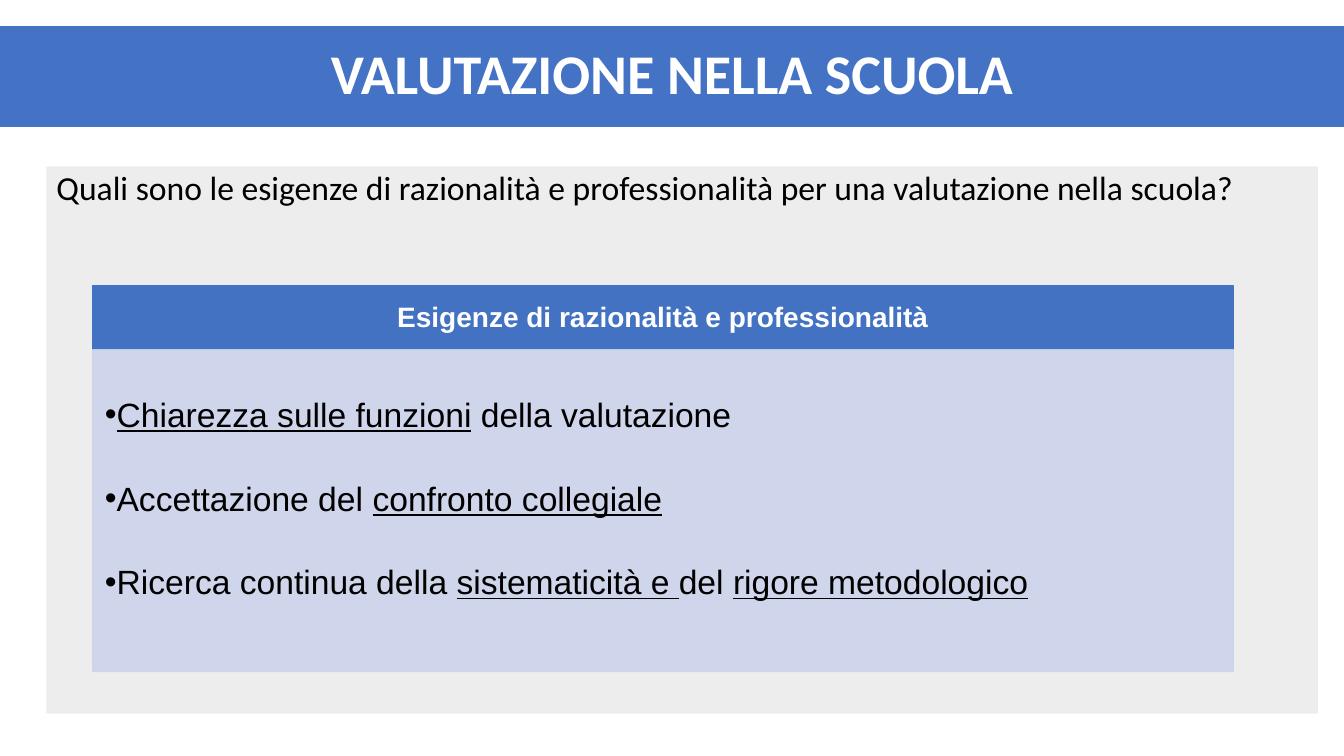
from dataclasses import dataclass

from lxml.etree import SubElement
from pptx import Presentation
from pptx.dml.color import RGBColor
from pptx.enum.shapes import MSO_SHAPE
from pptx.enum.text import MSO_ANCHOR, MSO_AUTO_SIZE, PP_ALIGN
from pptx.oxml.ns import qn
from pptx.util import Inches, Pt


@dataclass(frozen=True)
class Theme:
    """Colours, fonts and type sizes of the slide."""
    band: str = "4472C4"
    head: str = "4372C3"
    list: str = "CCD3EA"
    panel: str = "EDEDED"
    light: str = "FFFFFF"
    dark: str = "000000"
    sans: str = "Calibri"
    arial: str = "Arial"
    big: int = 40
    mid: int = 24
    small: int = 20


THEME = Theme()
WIDE, HIGH = 13.33, 7.5
TITLE = "VALUTAZIONE NELLA SCUOLA"
ASK = "Quali sono le esigenze di razionalità e professionalità per una valutazione nella scuola?"
HEAD = "Esigenze di razionalità e professionalità"
NEEDS = [
    [("Chiarezza sulle funzioni", True), (" della valutazione", False)],
    [("Accettazione del ", False), ("confronto collegiale", True)],
    [("Ricerca continua della ", False), ("sistematicità e ", True),
     ("del ", False), ("rigore metodologico", True)],
]


def apply(item, form):
    """Set each value of a format dict on an item."""
    for name, value in form.items():
        setattr(item, name, value)


def part(box, x, y, w, h):
    """Return the box at the given shares of another box."""
    left, top, wide, high = box
    return left + x * wide, top + y * high, w * wide, h * high


def place(shape, box):
    """Move a shape into a box."""
    apply(shape, dict(zip(("left", "top", "width", "height"), map(Inches, box))))


def paint(shape, fill, line=None, width=1):
    """Give a shape a solid fill and an optional outline."""
    shape.fill.solid()
    shape.fill.fore_color.rgb = RGBColor.from_string(fill)
    if line:
        shape.line.color.rgb = RGBColor.from_string(line)
        shape.line.width = Pt(width)


def fade(shape, share):
    """Make the fill and outline of a shape partly opaque."""
    for tint in shape.element.spPr.iter(qn("a:srgbClr")):
        SubElement(tint, qn("a:alpha")).set("val", str(int(share * 100000)))


def setup(shape, anchor, pads=(0.1, 0.05, 0.1, 0.05)):
    """Prepare the text frame of a shape and return it."""
    frame = shape.text_frame
    sides = ("margin_left", "margin_top", "margin_right", "margin_bottom")
    apply(frame, {"word_wrap": True, "auto_size": MSO_AUTO_SIZE.NONE,
                  "vertical_anchor": anchor, **dict(zip(sides, map(Inches, pads)))})
    return frame


def write(para, runs, font, size, tint, align=PP_ALIGN.LEFT, bold=False, gap=0, mark=None):
    """Fill a paragraph with runs, each with its underline flag."""
    apply(para, {"alignment": align, "line_spacing": 0.9, "space_before": Pt(gap)})
    props = para._p.get_or_add_pPr()
    props.set("marL", "0")
    props.set("indent", "0")
    if mark:
        SubElement(props, qn("a:buFont")).set("typeface", font)
        SubElement(props, qn("a:buChar")).set("char", mark)
    else:
        SubElement(props, qn("a:buNone"))
    for text, under in runs:
        run = para.add_run()
        run.text = text
        apply(run.font, {"name": font, "size": Pt(size), "bold": bold, "underline": under})
        run.font.color.rgb = RGBColor.from_string(tint)


def banner(slide, box):
    """Place the title band."""
    title = slide.shapes.title
    place(title, box)
    paint(title, THEME.band, THEME.band, 0.75)
    frame = setup(title, MSO_ANCHOR.MIDDLE)
    write(frame.paragraphs[0], [(TITLE, False)], THEME.sans, THEME.big, THEME.light,
          PP_ALIGN.CENTER, True)


def panel(slide, box):
    """Place the grey panel with its question and the card of needs."""
    body = slide.placeholders[1]
    place(body, box)
    paint(body, THEME.panel)
    frame = setup(body, MSO_ANCHOR.TOP)
    write(frame.paragraphs[0], [(ASK, False)], THEME.sans, THEME.mid, THEME.dark)
    card(slide, part(box, 0.0365, 0.219, 0.897, 0.704))


def block(slide, box, tint):
    """Add a flat rectangle and return it."""
    shape = slide.shapes.add_shape(MSO_SHAPE.RECTANGLE, *map(Inches, box))
    shape.shadow.inherit = False
    paint(shape, tint, tint)
    return shape


def card(slide, box):
    """Place the header and the bulleted needs below it."""
    cut = 0.165
    head = block(slide, part(box, 0, 0, 1, cut), THEME.head)
    frame = setup(head, MSO_ANCHOR.MIDDLE, (0.16, 0.09, 0.16, 0.09))
    write(frame.paragraphs[0], [(HEAD, False)], THEME.arial, THEME.small, THEME.light,
          PP_ALIGN.CENTER, True)
    needs = block(slide, part(box, 0, cut, 1, 1 - cut), THEME.list)
    fade(needs, 0.9)
    frame = setup(needs, MSO_ANCHOR.TOP, (0.12, 0.48, 0.16, 0.17))
    for row, runs in enumerate(NEEDS):
        para = frame.add_paragraph() if row else frame.paragraphs[0]
        write(para, runs, THEME.arial, THEME.mid, THEME.dark, gap=34 if row else 0, mark="•")


def main():
    """Build and save the slide."""
    deck = Presentation()
    apply(deck, {"slide_width": Inches(WIDE), "slide_height": Inches(HIGH)})
    slide = deck.slides.add_slide(deck.slide_layouts[1])
    page = (0, 0, WIDE, HIGH)
    banner(slide, part(page, 0, 0.035, 1, 0.132))
    panel(slide, part(page, 0.0345, 0.22, 0.946, 0.724))
    deck.save("out.pptx")


if __name__ == "__main__":
    main()
